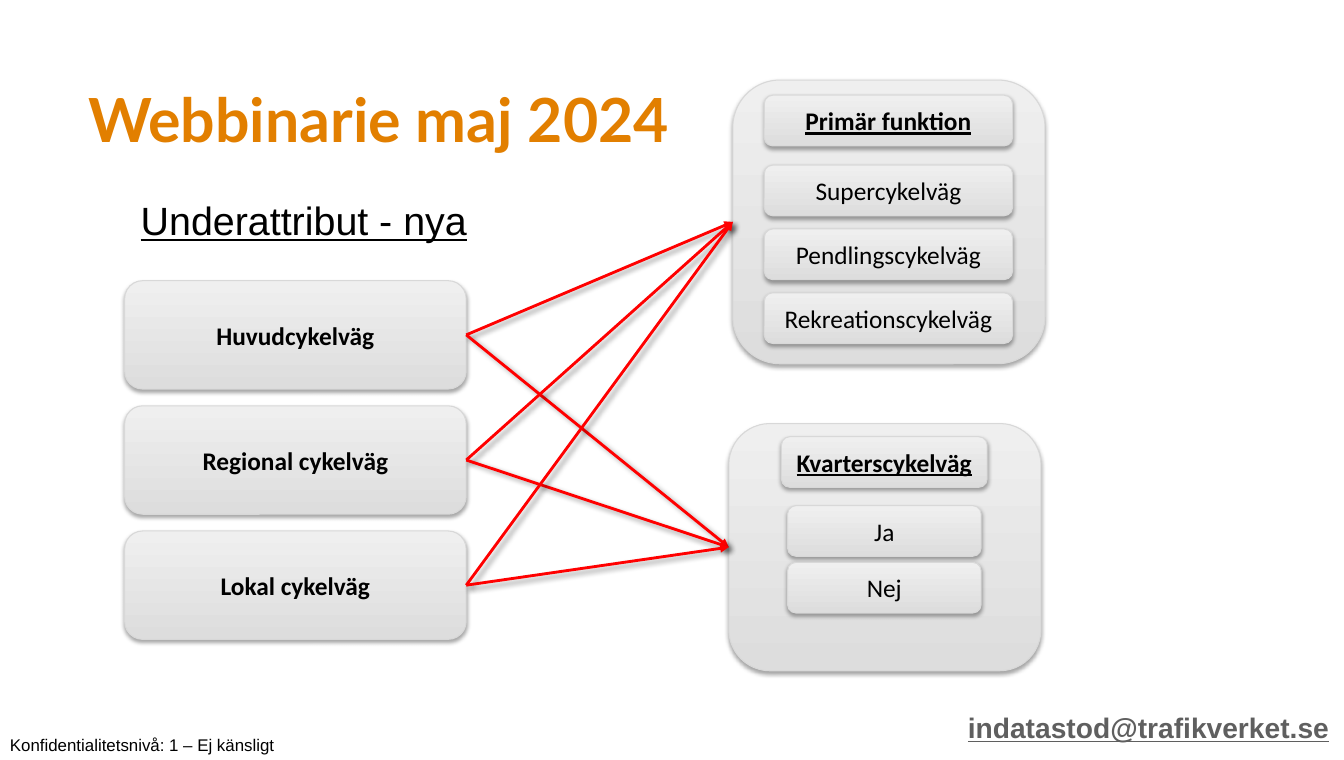
from lxml import etree
from pptx import Presentation
from pptx.dml.color import RGBColor
from pptx.enum.shapes import MSO_CONNECTOR, MSO_SHAPE
from pptx.enum.text import MSO_ANCHOR, MSO_AUTO_SIZE, PP_ALIGN
from pptx.oxml.ns import qn
from pptx.util import Inches, Pt

# Content
TITLE = "Webbinarie maj 2024"
ROAD_TYPES = ["Huvudcykelväg", "Regional cykelväg", "Lokal cykelväg"]
BLACK = RGBColor(0x00, 0x00, 0x00)
GREY = RGBColor(0x5F, 0x5F, 0x5F)
ORANGE = RGBColor(0xE2, 0x7F, 0x00)
RED = RGBColor(0xFF, 0x00, 0x00)
DARK_FILL = RGBColor(0xDD, 0xDD, 0xDD)
LIGHT_FILL = RGBColor(0xEF, 0xEF, 0xEF)
OUTLINE = RGBColor(0xD8, 0xD8, 0xD8)

# Text, box, size, colour, bold, underline
LABELS = [
    ("Underattribut - nya", (1.29, 1.89, 9.09, 0.57), 28, BLACK, False, True),
    ("indatastod@trafikverket.se", (9.45, 6.96, 3.81, 0.44), 20, GREY, True, True),
    ("Konfidentialitetsnivå: 1 – Ej känsligt", (0, 7.2, 4.14, 0.3), 12, BLACK, False, False),
]

# Panel box, heading with its box, options with the first box and the step down
PANELS = [
    {"box": (7.23, 0.79, 3.08, 2.8),
     "heading": "Primär funktion", "heading_box": (7.54, 0.94, 2.45, 0.5),
     "options": ["Supercykelväg", "Pendlingscykelväg", "Rekreationscykelväg"],
     "first_box": (7.54, 1.63, 2.45, 0.5), "step": 0.63},
    {"box": (7.19, 4.18, 3.08, 2.44),
     "heading": "Kvarterscykelväg", "heading_box": (7.71, 4.31, 2.03, 0.5),
     "options": ["Ja", "Nej"],
     "first_box": (7.77, 4.99, 1.91, 0.5), "step": 0.56},
]
ROAD_BOX, ROAD_STEP = (1.23, 2.77, 3.37, 1.07), 1.235
LEFT_SITE, RIGHT_SITE = 1, 3


def inches(box):
    return [Inches(value) for value in box]


def style_text(paragraph, name, size, color, bold=False, underline=False):
    for run in paragraph.runs:
        font = run.font
        font.name, font.size, font.bold, font.underline = name, Pt(size), bold, underline
        font.color.rgb = color


def add_shadow(shape, alpha, blur, distance, angle):
    effects = etree.SubElement(shape._element.spPr, qn("a:effectLst"))
    shadow = etree.SubElement(effects, qn("a:outerShdw"), blurRad=str(Pt(blur)),
                              dist=str(Pt(distance)), dir=str(angle * 60000),
                              rotWithShape="0")
    color = etree.SubElement(shadow, qn("a:srgbClr"), val="000000")
    etree.SubElement(color, qn("a:alpha"), val=str(alpha * 1000))


def add_box(slide, box, text="", bold=False, underline=False):
    shape = slide.shapes.add_shape(MSO_SHAPE.ROUNDED_RECTANGLE, *inches(box))
    shape.fill.gradient()
    shape.fill.gradient_angle = 90
    for stop, color in zip(shape.fill.gradient_stops, (DARK_FILL, LIGHT_FILL)):
        stop.color.rgb = color
    shape.line.color.rgb = OUTLINE
    shape.line.width = Pt(0.75)
    add_shadow(shape, 35, 3.1, 1.8, 90)
    if text:
        frame = shape.text_frame
        frame.text = text
        frame.vertical_anchor = MSO_ANCHOR.MIDDLE
        frame.paragraphs[0].alignment = PP_ALIGN.CENTER
        style_text(frame.paragraphs[0], "Calibri", 18, BLACK, bold, underline)
    return shape


def add_arrow(slide, source, target):
    arrow = slide.shapes.add_connector(MSO_CONNECTOR.STRAIGHT, 0, 0, 0, 0)
    arrow.begin_connect(source, RIGHT_SITE)
    arrow.end_connect(target, LEFT_SITE)
    arrow.line.color.rgb = RED
    arrow.line.width = Pt(2)
    etree.SubElement(arrow.line._get_or_add_ln(), qn("a:tailEnd"), type="triangle")
    add_shadow(arrow, 40, 4, 3, 45)


def add_title(slide):
    title = slide.shapes.title
    title.left, title.top, title.width, title.height = inches((0.77, 0.76, 10.64, 0.67))
    frame = title.text_frame
    frame.text = TITLE
    frame.auto_size = MSO_AUTO_SIZE.NONE
    frame.vertical_anchor = MSO_ANCHOR.TOP
    frame.paragraphs[0].alignment = PP_ALIGN.LEFT
    style_text(frame.paragraphs[0], "Lato", 43.2, ORANGE, bold=True)


def add_label(slide, text, box, size, color, bold, underline):
    frame = slide.shapes.add_textbox(*inches(box)).text_frame
    frame.word_wrap = True
    frame.auto_size = MSO_AUTO_SIZE.SHAPE_TO_FIT_TEXT
    frame.text = text
    style_text(frame.paragraphs[0], "Arial", size, color, bold, underline)


def add_column(slide, texts, first_box, step, bold=False):
    left, top, width, height = first_box
    return [add_box(slide, (left, top + index * step, width, height), text, bold)
            for index, text in enumerate(texts)]


def main():
    presentation = Presentation()
    presentation.slide_width, presentation.slide_height = Inches(13.26), Inches(7.5)
    slide = presentation.slides.add_slide(presentation.slide_layouts[5])

    # Title and free text
    add_title(slide)
    for label in LABELS:
        add_label(slide, *label)

    # Road types on the left, attribute panels on the right
    roads = add_column(slide, ROAD_TYPES, ROAD_BOX, ROAD_STEP, bold=True)
    panels = []
    for panel in PANELS:
        panels.append(add_box(slide, panel["box"]))
        add_box(slide, panel["heading_box"], panel["heading"], bold=True, underline=True)
        add_column(slide, panel["options"], panel["first_box"], panel["step"])

    # Every road type points to every panel
    for road in roads:
        for panel in panels:
            add_arrow(slide, road, panel)

    presentation.save("out.pptx")


if __name__ == "__main__":
    main()
